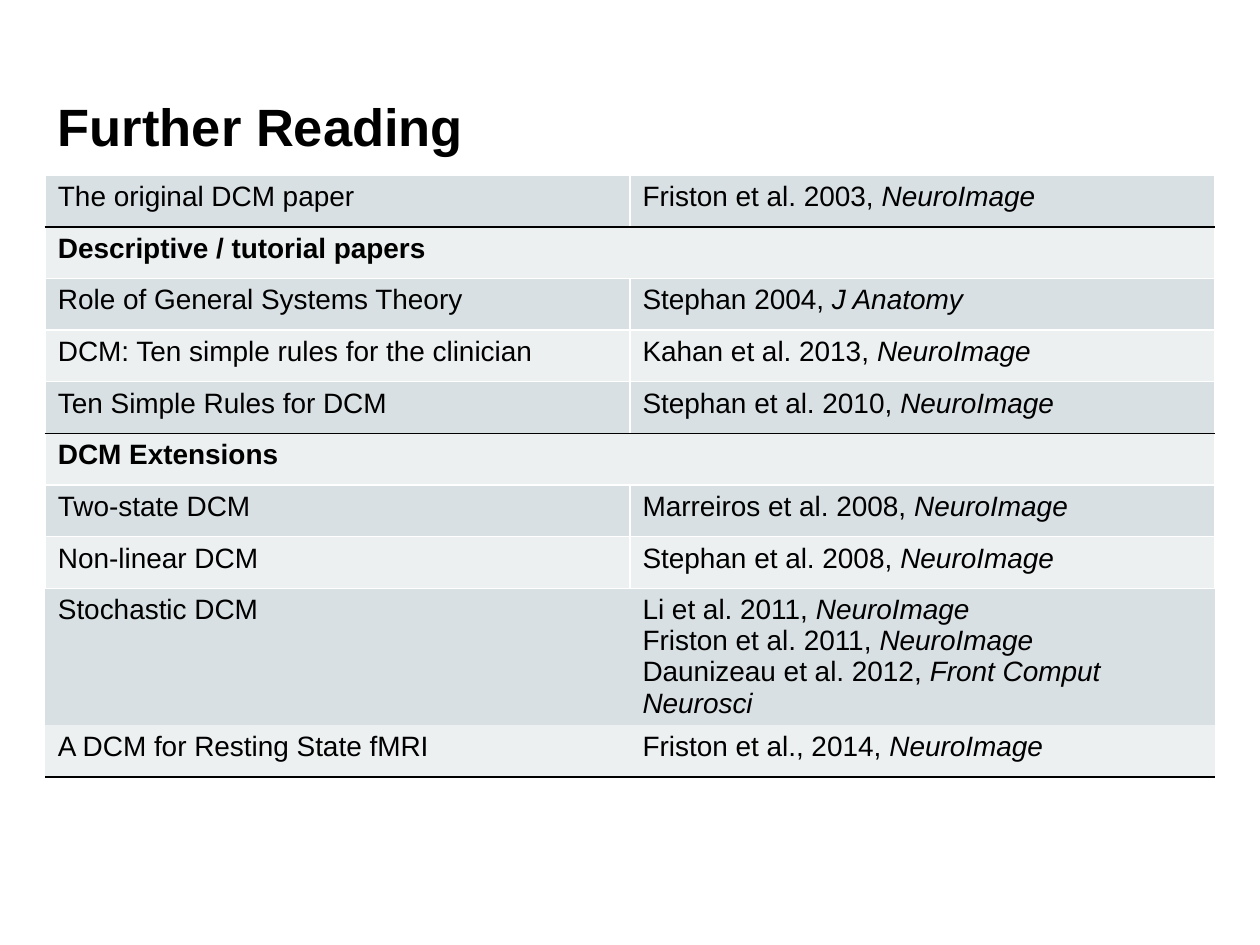
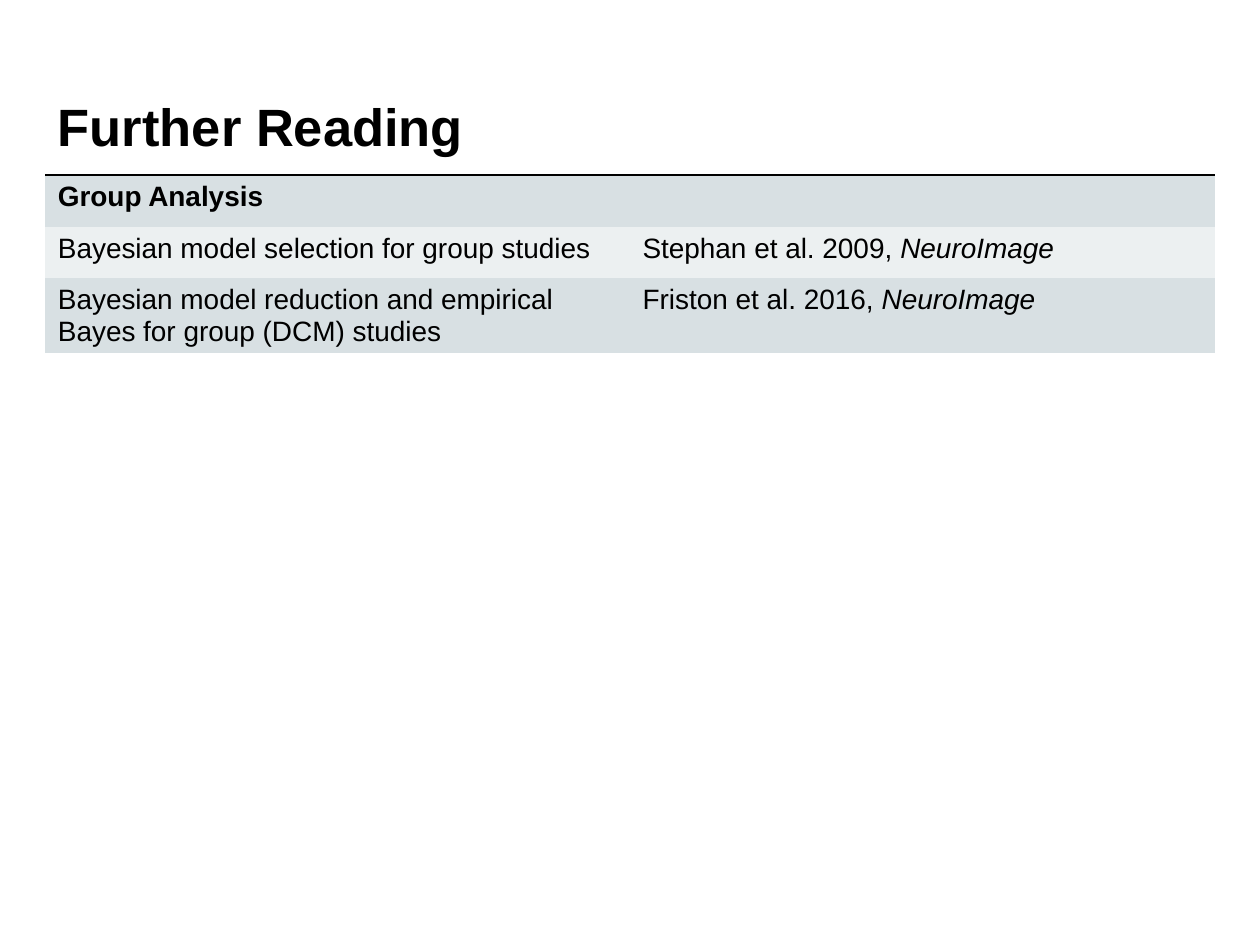
from dataclasses import dataclass

from lxml.etree import SubElement
from pptx import Presentation
from pptx.dml.color import RGBColor
from pptx.enum.text import MSO_ANCHOR, MSO_AUTO_SIZE, PP_ALIGN
from pptx.oxml.ns import qn
from pptx.util import Inches, Pt


@dataclass(frozen=True)
class Theme:
    font: str = "Arial"
    ink: str = "000000"
    rule: str = "FFFFFF"
    bands: tuple = ("D8E0E3", "ECF0F1")
    title_size: int = 30
    body_size: int = 16
    rule_width: int = 1
    plain_table: str = "{2D5ABB26-0587-4C30-8999-92F81FD0307C}"


LEFT, WIDTH = 0.36, 9.28
TITLE_TOP, TITLE_HEIGHT = 0.68, 0.63
TABLE_TOP, ROW_HEIGHT = 1.39, 0.41
NEURO = "NeuroImage"
SPAN = None

# Edges: lower case is a white rule, upper case a black one.
PAPERS = [
    ("The original DCM paper", [("Friston et al. 2003, ", NEURO)], "lrtB"),
    ("Descriptive / tutorial papers", SPAN, "lrTb"),
    ("Role of General Systems Theory", [("Stephan 2004, ", "J Anatomy")], "lrtb"),
    ("DCM: Ten simple rules for the clinician", [("Kahan et al. 2013, ", NEURO)], "lrt"),
    ("Ten Simple Rules for DCM", [("Stephan et al. 2010, ", NEURO)], "lrB"),
    ("DCM Extensions", SPAN, "lrTb"),
    ("Two-state DCM", [("Marreiros et al. 2008, ", NEURO)], "lrtb"),
    ("Non-linear DCM", [("Stephan et al. 2008, ", NEURO)], "lrt"),
    ("Stochastic DCM", [
        ("Li et al. 2011, ", NEURO),
        ("Friston et al. 2011, ", NEURO),
        ("Daunizeau et al. 2012, ", "Front Comput Neurosci"),
    ], ""),
    ("A DCM for Resting State fMRI", [("Friston et al., 2014, ", NEURO)], "B"),
]
GROUP_PAPERS = [
    ("Group Analysis", [], "T"),
    ("Bayesian model selection for group studies", [("Stephan et al. 2009, ", NEURO)], ""),
    ("Bayesian model reduction and empirical Bayes for group (DCM) studies",
     [("Friston et al. 2016, ", NEURO)], ""),
]


class Deck:
    """Hold the theme and the current slide, and draw its elements."""

    def __init__(self, theme):
        self.theme = theme
        self.prs = Presentation()
        self.prs.slide_width, self.prs.slide_height = Inches(10), Inches(7.5)
        self.s = None

    def add_slide(self, title):
        self.s = self.prs.slides.add_slide(self.prs.slide_layouts[5])
        sp = self.s.shapes.title
        box = {"left": LEFT, "top": TITLE_TOP, "width": WIDTH, "height": TITLE_HEIGHT}
        for name, value in box.items():
            setattr(sp, name, Inches(value))
        tf = sp.text_frame
        frame = {"auto_size": MSO_AUTO_SIZE.NONE, "word_wrap": True,
                 "vertical_anchor": MSO_ANCHOR.MIDDLE}
        for name, value in frame.items():
            setattr(tf, name, value)
        p = tf.paragraphs[0]
        p.alignment = PP_ALIGN.LEFT
        self.add_run(p, title, size=Pt(self.theme.title_size), bold=True)

    def add_run(self, p, text, **formats):
        r = p.add_run()
        r.text = text
        base = {"name": self.theme.font, "size": Pt(self.theme.body_size),
                "bold": False, "italic": False}
        for name, value in (base | formats).items():
            setattr(r.font, name, value)
        r.font.color.rgb = RGBColor.from_string(self.theme.ink)

    def add_edges(self, cell, edges):
        tc_pr = cell._tc.get_or_add_tcPr()
        for edge in edges:
            color = self.theme.ink if edge.isupper() else self.theme.rule
            ln = SubElement(tc_pr, qn(f"a:ln{edge.upper()}"),
                            w=str(Pt(self.theme.rule_width)))
            SubElement(SubElement(ln, qn("a:solidFill")), qn("a:srgbClr"), val=color)

    def add_reading_table(self, rows):
        frame = self.s.shapes.add_table(
            len(rows), 2, Inches(LEFT), Inches(TABLE_TOP),
            Inches(WIDTH), Inches(ROW_HEIGHT * len(rows)))
        table = frame.table
        frame._element.find(".//" + qn("a:tableStyleId")).text = self.theme.plain_table
        for name in ("first_row", "horz_banding"):
            setattr(table, name, False)
        for i, (topic, papers, edges) in enumerate(rows):
            table.rows[i].height = Inches(ROW_HEIGHT)
            topic_cell, paper_cell = table.cell(i, 0), table.cell(i, 1)
            for cell in (topic_cell, paper_cell):
                self.add_edges(cell, edges)
                cell.fill.solid()
                cell.fill.fore_color.rgb = RGBColor.from_string(self.theme.bands[i % 2])
            if papers is SPAN:
                topic_cell.merge(paper_cell)
            self.add_run(topic_cell.text_frame.paragraphs[0], topic, bold=not papers)
            tf = paper_cell.text_frame
            for j, (authors, journal) in enumerate(papers or []):
                p = tf.add_paragraph() if j else tf.paragraphs[0]
                self.add_run(p, authors)
                self.add_run(p, journal, italic=True)


def main():
    deck = Deck(Theme())
    for rows in (PAPERS, GROUP_PAPERS):
        deck.add_slide("Further Reading")
        deck.add_reading_table(rows)
    deck.prs.save("out.pptx")


if __name__ == "__main__":
    main()
